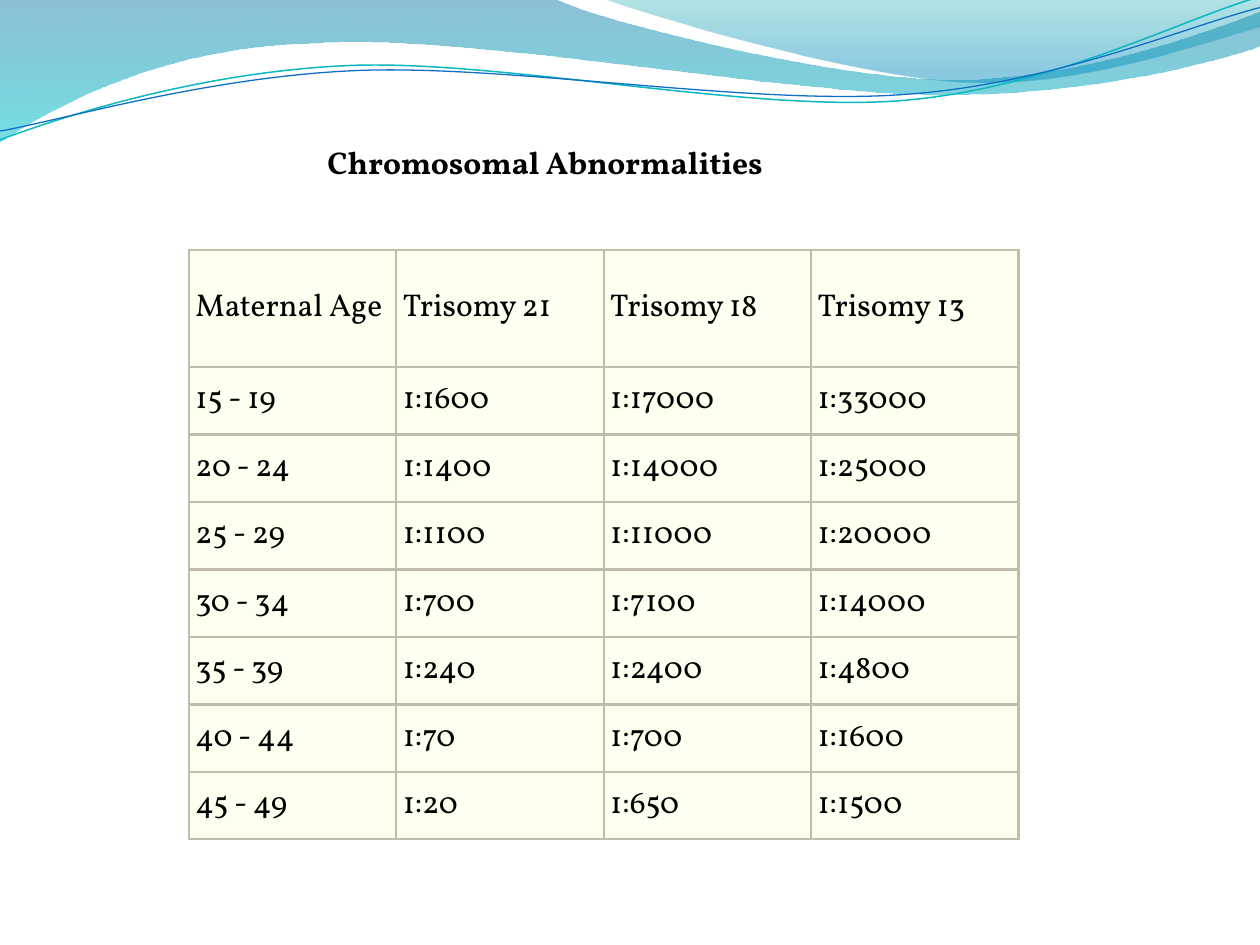
import math

from lxml import etree
from pptx import Presentation
from pptx import util as u
from pptx.dml.color import RGBColor
from pptx.enum import text
from pptx.oxml.ns import qn

FONT = "Vollkorn"
GRID = 0.0254  # cm per wave unit: the slide is 1000 by 750 units
LINE_TILT = -2.7  # degrees

# Each wave is a start point, then segments: one point for a line, three for a curve.
BACK_WAVE = [(0, -1), [(440, -1)],
             [(476, 17), (664, 63), (758, 63)], [(853, 63), (958, 26), (1000, 9)],
             [(1001, 36)],
             [(983, 44), (870, 76), (746, 75)], [(622, 75), (382, 28), (257, 34)],
             [(129, 36), (46, 83), (-1, 113)], [(0, -1)]]
FRONT_WAVE = [(479, -1), [(509, 11), (682, 62), (769, 65)],
              [(856, 69), (961, 32), (1000, 21)], [(1000, 0)], [(479, -1)]]
TEAL_LINE = [(0, 111), [(48, 93), (158, 57), (277, 52)],
             [(395, 47), (593, 89), (713, 80)], [(833, 71), (938, 15), (998, -2)]]
BLUE_LINE = [(0, 104), [(47, 96), (164, 61), (283, 56)],
             [(403, 51), (597, 84), (717, 75)], [(836, 67), (941, 21), (1000, 6)]]

RISKS = [
    ("Maternal Age", "Trisomy 21", "Trisomy 18", "Trisomy 13"),
    ("15 - 19", "1:1600", "1:17000", "1:33000"),
    ("20 - 24", "1:1400", "1:14000", "1:25000"),
    ("25 - 29", "1:1100", "1:11000", "1:20000"),
    ("30 - 34", "1:700", "1:7100", "1:14000"),
    ("35 - 39", "1:240", "1:2400", "1:4800"),
    ("40 - 44", "1:70", "1:700", "1:1600"),
    ("45 - 49", "1:20", "1:650", "1:1500"),
]


def rgb(value):
    return RGBColor.from_string(value)


def write(frame, words, size=18, color="000000", bold=False):
    run = frame.paragraphs[0].add_run()
    run.text = words
    run.font.name = FONT
    run.font.size = u.Pt(size)
    run.font.bold = bold
    run.font.color.rgb = rgb(color)


def turn(point, pivot, degrees):
    """Turn a point clockwise around a pivot."""
    cosine, sine = math.cos(math.radians(degrees)), math.sin(math.radians(degrees))
    dx, dy = point[0] - pivot[0], point[1] - pivot[1]
    return pivot[0] + dx * cosine - dy * sine, pivot[1] + dx * sine + dy * cosine


def bend(shape, segments):
    """Join the straight steps of each three-point segment into one cubic curve."""
    outline = next(shape._element.iter(qn("a:path")))
    steps = iter(outline.findall(qn("a:lnTo")))
    for segment in segments:
        members = [next(steps) for _ in segment]
        if len(members) == 3:
            curve = etree.Element(qn("a:cubicBezTo"))
            members[0].addprevious(curve)
            for member in members:
                curve.append(member[0])
                outline.remove(member)


def add_wave(slide, wave, closed, pivot=(0, 0), tilt=0):
    start, *segments = wave
    points = [start, *(point for segment in segments for point in segment)]
    level = [turn(point, pivot, -tilt) for point in points]
    first, *rest = [(u.Cm(x * GRID), u.Cm(y * GRID)) for x, y in level]
    builder = slide.shapes.build_freeform(*first)
    builder.add_line_segments(rest, close=closed)
    shape = builder.convert_to_shape()
    bend(shape, segments)
    shape.rotation = tilt
    shape.shadow.inherit = False
    return shape


def add_wave_area(slide, wave, stops):
    """Fill a wave downwards with stops of (position, colour, opacity percent)."""
    area = add_wave(slide, wave, closed=True)
    area.line.fill.background()
    area.fill.gradient()
    area.fill.gradient_angle = 270
    for stop, (position, color, _) in zip(area.fill.gradient_stops, stops):
        stop.position = position
        stop.color.rgb = rgb(color)
    for tint, (_, _, opacity) in zip(area._element.spPr.iter(qn("a:srgbClr")), stops):
        etree.SubElement(tint, qn("a:alpha"), val=str(opacity * 1000))


def add_wave_line(slide, wave, color, width, pivot):
    stroke = add_wave(slide, wave, closed=False, pivot=pivot, tilt=LINE_TILT)
    stroke.fill.background()
    stroke.line.color.rgb = rgb(color)
    stroke.line.width = u.Pt(width)


def add_title(slide, words):
    title = slide.shapes.add_textbox(u.Cm(6.35), u.Cm(2.76), u.Cm(9.73), u.Cm(1.02))
    title.text_frame.word_wrap = True
    title.text_frame.auto_size = text.MSO_AUTO_SIZE.SHAPE_TO_FIT_TEXT
    write(title.text_frame, words, bold=True)


def set_borders(cell, color, width):
    properties = cell._tc.get_or_add_tcPr()
    for index, side in enumerate(("lnL", "lnR", "lnT", "lnB")):
        border = etree.Element(qn(f"a:{side}"), w=str(u.Pt(width)))
        fill = etree.SubElement(border, qn("a:solidFill"))
        etree.SubElement(fill, qn("a:srgbClr"), val=color)
        properties.insert(index, border)


def add_risk_table(slide, rows):
    column_width, header_height, row_height = u.Cm(4.18), u.Cm(2.36), u.Cm(1.36)
    table = slide.shapes.add_table(
        len(rows), len(rows[0]), u.Cm(3.81), u.Cm(5.04),
        column_width * len(rows[0]),
        header_height + row_height * (len(rows) - 1)).table
    table.first_row = table.horz_banding = False
    for column in table.columns:
        column.width = column_width
    for index, (row, values) in enumerate(zip(table.rows, rows)):
        row.height = row_height if index else header_height
        for cell, value in zip(row.cells, values):
            cell.margin_left = cell.margin_right = u.Cm(0.13)
            cell.margin_top = cell.margin_bottom = u.Cm(0.13)
            cell.vertical_anchor = text.MSO_ANCHOR.MIDDLE
            cell.fill.solid()
            cell.fill.fore_color.rgb = rgb("FFFFF0")
            set_borders(cell, "C2BCAA", 1.5)
            write(cell.text_frame, value)


def main():
    deck = Presentation()
    deck.slide_width, deck.slide_height = u.Cm(25.4), u.Cm(19.05)
    slide = deck.slides.add_slide(deck.slide_layouts[6])
    add_wave_area(slide, BACK_WAVE, [(0, "0074A1", 45), (1, "00C6CF", 55)])
    add_wave_area(slide, FRONT_WAVE, [(0, "00A1A9", 30), (0.8, "008BBF", 45)])
    add_wave_line(slide, TEAL_LINE, "0AB8BF", 0.85, pivot=(499, 57.5))
    add_wave_line(slide, BLUE_LINE, "0F6FC6", 0.75, pivot=(499.5, 59))
    add_title(slide, "Chromosomal Abnormalities")
    add_risk_table(slide, RISKS)
    deck.save("out.pptx")


if __name__ == "__main__":
    main()
